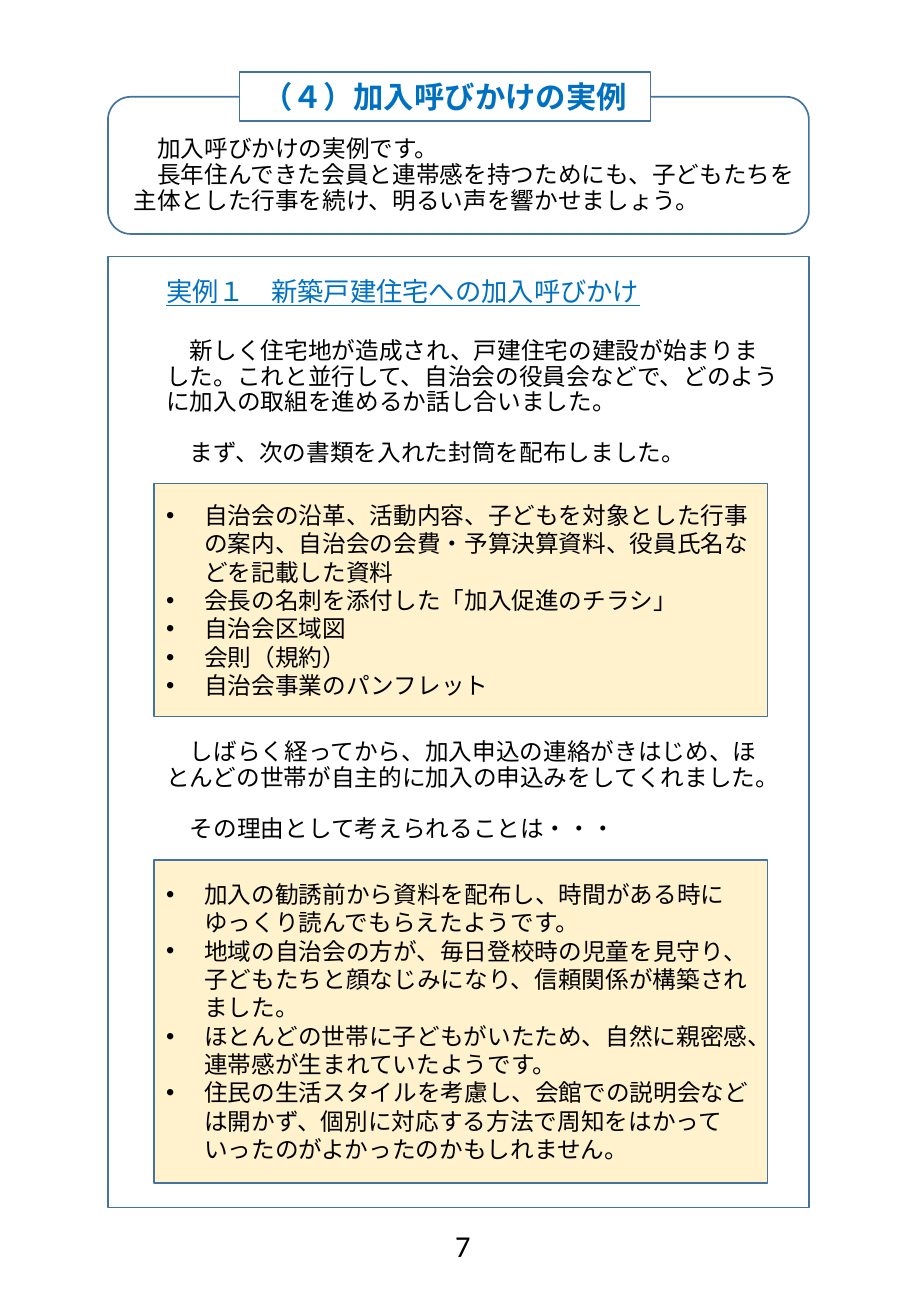
from lxml import etree
from pptx import Presentation
from pptx.dml.color import RGBColor
from pptx.enum import lang, shapes, text
from pptx.oxml import ns
from pptx.util import Pt

BLUE = RGBColor(0x00, 0x70, 0xC0)
EDGE = RGBColor(0x43, 0x73, 0x9E)
CREAM = RGBColor(0xFF, 0xF2, 0xCC)
WHITE = RGBColor(0xFF, 0xFF, 0xFF)
BLACK = RGBColor(0x00, 0x00, 0x00)
JAPANESE_FONT = "Noto Sans CJK JP"
BODY_PITCH = 15.17
LIST_PITCH = 16.83


def add_panel(kind, left, top, width, height, fill=None):
    panel = page.shapes.add_shape(kind, Pt(left), Pt(top), Pt(width), Pt(height))
    panel.shadow.inherit = False
    if fill is None:
        panel.fill.background()
    else:
        panel.fill.solid()
        panel.fill.fore_color.rgb = fill
    panel.line.color.rgb = EDGE
    panel.line.width = Pt(1)
    return panel


def write(box, lines, anchor, size=14, color=BLACK, pitch=BODY_PITCH, gap=0,
          align=text.PP_ALIGN.LEFT, font=JAPANESE_FONT):
    frame = box.text_frame
    frame.text = "\n".join(lines)
    frame.word_wrap = True
    frame.auto_size = text.MSO_AUTO_SIZE.NONE
    frame.vertical_anchor = anchor
    for index, para in enumerate(frame.paragraphs):
        para.alignment = align
        para.line_spacing = Pt(pitch)
        para.space_before = Pt(gap if index else 0)
        for span in para.runs:
            span.font.size = Pt(size)
            span.font.color.rgb = color
            span.font.name = font
            span.font.language_id = lang.MSO_LANGUAGE_ID.JAPANESE
            east_asian = etree.SubElement(span.font._element, ns.qn("a:ea"))
            east_asian.set("typeface", font)
    return frame


deck = Presentation()
deck.slide_width, deck.slide_height = Pt(540), Pt(780)
page = deck.slides.add_slide(deck.slide_layouts[5])

add_panel(shapes.MSO_SHAPE.RECTANGLE, 64, 152, 415.5, 563.8, WHITE)
add_panel(shapes.MSO_SHAPE.ROUNDED_RECTANGLE, 64, 57.4, 415.5, 81.3)

title = page.shapes.title
page.shapes._spTree.append(title._element)
title.left, title.top, title.width, title.height = Pt(141.8), Pt(42.7), Pt(243.6), Pt(29.1)
title.fill.solid()
title.fill.fore_color.rgb = WHITE
title.line.color.rgb = EDGE
title.line.width = Pt(0.75)
title_frame = write(title, ["（４）加入呼びかけの実例"], text.MSO_ANCHOR.MIDDLE, 18, BLUE,
                    21.6, align=text.PP_ALIGN.CENTER)
title_frame.paragraphs[0].runs[0].font.bold = True

passages = [
    (72, 86.4, 407.5, 43.9, 0, [
        "　加入呼びかけの実例です。",
        "　長年住んできた会員と連帯感を持つためにも、子どもたちを主体とした行事を続け、明るい声を響かせましょう。",
    ]),
    (91.4, 196.6, 378, 83.5, BODY_PITCH, [
        "　新しく住宅地が造成され、戸建住宅の建設が始まりました。これと並行して、自治会の役員会などで、どのように加入の取組を進めるか話し合いました。",
        "　まず、次の書類を入れた封筒を配布しました。",
    ]),
    (91.4, 434.6, 378, 68, BODY_PITCH, [
        "　しばらく経ってから、加入申込の連絡がきはじめ、ほとんどの世帯が自主的に加入の申込みをしてくれました。",
        "　その理由として考えられることは・・・",
    ]),
]
for left, top, width, height, gap, lines in passages:
    box = page.shapes.add_textbox(Pt(left), Pt(top), Pt(width), Pt(height))
    write(box, lines, text.MSO_ANCHOR.BOTTOM, gap=gap)

heading = page.shapes.add_textbox(Pt(91.4), Pt(160), Pt(388), Pt(25.3))
heading_frame = write(heading, ["実例１　新築戸建住宅への加入呼びかけ"], text.MSO_ANCHOR.BOTTOM,
                      15.6, BLUE, 16.8)
heading_frame.paragraphs[0].runs[0].font.underline = True

lists = [
    (286.6, 138.2, [
        "自治会の沿革、活動内容、子どもを対象とした行事の案内、自治会の会費・予算決算資料、役員氏名などを記載した資料",
        "会長の名刺を添付した「加入促進のチラシ」",
        "自治会区域図",
        "会則（規約）",
        "自治会事業のパンフレット",
    ]),
    (509.8, 191.5, [
        "加入の勧誘前から資料を配布し、時間がある時にゆっくり読んでもらえたようです。",
        "地域の自治会の方が、毎日登校時の児童を見守り、子どもたちと顔なじみになり、信頼関係が構築されました。",
        "ほとんどの世帯に子どもがいたため、自然に親密感、連帯感が生まれていたようです。",
        "住民の生活スタイルを考慮し、会館での説明会などは開かず、個別に対応する方法で周知をはかっていったのがよかったのかもしれません。",
    ]),
]
for top, height, items in lists:
    panel = add_panel(shapes.MSO_SHAPE.RECTANGLE, 91.4, top, 363.6, height, CREAM)
    frame = write(panel, items, text.MSO_ANCHOR.MIDDLE, pitch=LIST_PITCH)
    for para in frame.paragraphs:
        properties = para._p.get_or_add_pPr()
        properties.set("marL", str(Pt(22.5)))
        properties.set("indent", str(Pt(-22.5)))
        etree.SubElement(properties, ns.qn("a:buFont")).set("typeface", "Arial")
        etree.SubElement(properties, ns.qn("a:buChar")).set("char", "•")

number = page.shapes.add_textbox(Pt(247), Pt(723.6), Pt(54.7), Pt(29.1))
write(number, ["7"], text.MSO_ANCHOR.TOP, 18, pitch=21.6,
      align=text.PP_ALIGN.CENTER, font="Calibri")

deck.save("out.pptx")
